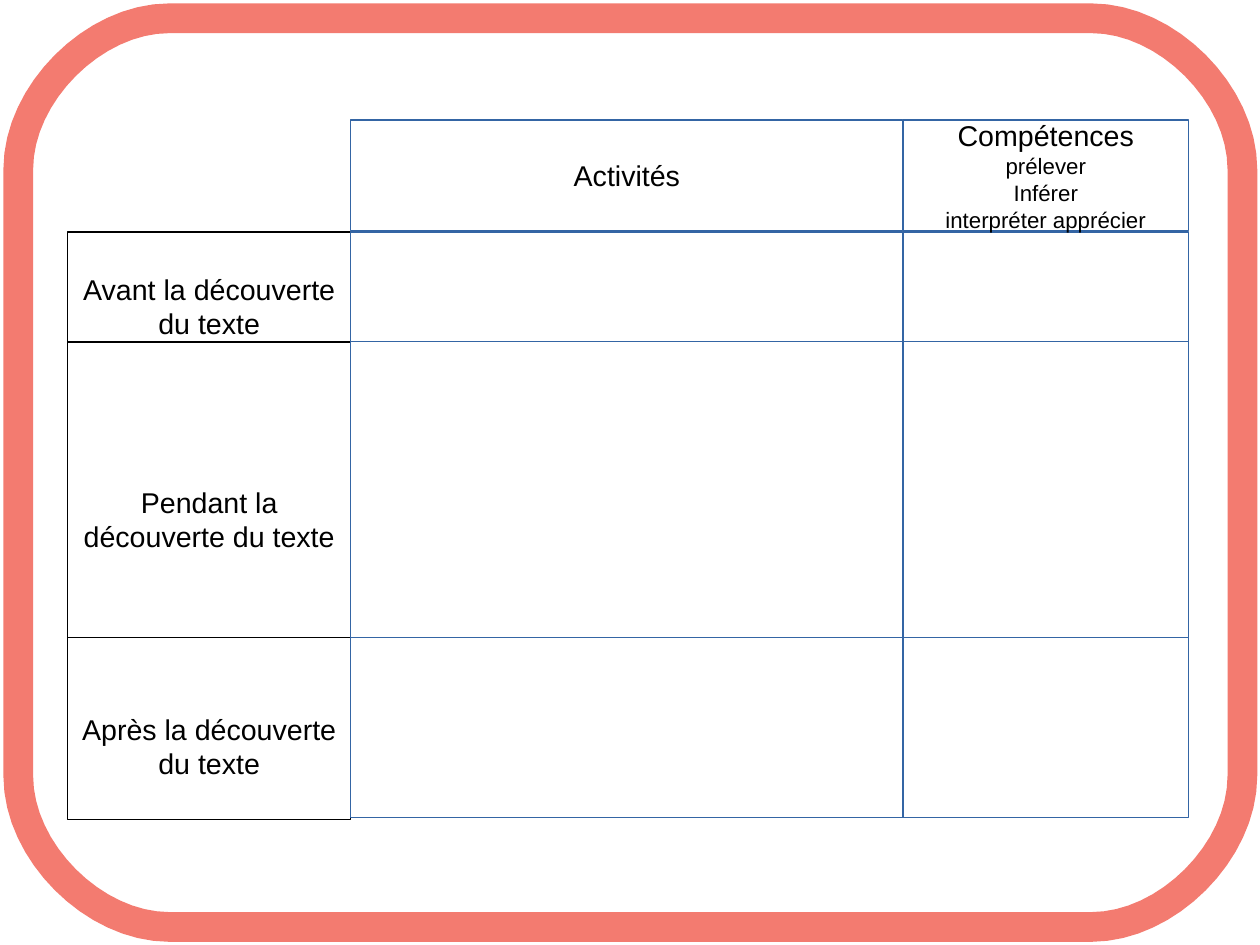
from pptx import Presentation
from pptx.dml.color import RGBColor
from pptx.enum import shapes, text
from pptx.util import Cm, Inches, Pt

BLACK = RGBColor(0x00, 0x00, 0x00)
WHITE = RGBColor(0xFF, 0xFF, 0xFF)
BLUE = RGBColor(0x34, 0x65, 0xA4)
CORAL = RGBColor(0xF3, 0x7B, 0x70)

HEADERS = [
    [("Activités", 18)],
    [("Compétences", 18), ("prélever", 14), ("Inférer", 14), ("interpréter apprécier", 14)],
]
STAGES = [
    ("Avant la découverte du texte", 1),
    ("Pendant la découverte du texte", 4),
    ("Après la découverte du texte", 2),
]

COLUMNS = [(0.59, 2.48), (3.07, 4.83), (7.9, 2.5)]
HEADER_ROW = (1.05, 0.97)
STAGE_ROWS = [(2.03, 0.97), (2.99, 2.59), (5.58, 1.57)]
LAST_LABEL_EXTRA = 0.02
LINE_HEIGHT = 0.3
FRAME_EDGES = (0.16, 0.16, 10.87, 8.11)
FRAME_CORNER = 1.32
CORNER_STEPS = 16


def style(shape, line_color, weight, fill_color=None):
    shape.shadow.inherit = False
    shape.line.color.rgb = line_color
    shape.line.width = Pt(weight)
    if fill_color is None:
        shape.fill.background()
    else:
        shape.fill.solid()
        shape.fill.fore_color.rgb = fill_color


def add_box(page, column, row, line_color, fill_color=None):
    (left, width), (top, height) = column, row
    box = page.shapes.add_shape(
        shapes.MSO_SHAPE.RECTANGLE, Inches(left), Inches(top), Inches(width), Inches(height))
    style(box, line_color, 0.75, fill_color)
    return box


def write(box, lines, anchor, lines_above=0):
    frame = box.text_frame
    frame.word_wrap = True
    frame.vertical_anchor = anchor
    frame.margin_top = Inches(0.05 + lines_above * LINE_HEIGHT)
    frame.text = "\n".join(words for words, size in lines)
    for para, (words, size) in zip(frame.paragraphs, lines):
        para.alignment = text.PP_ALIGN.CENTER
        for span in para.runs:
            span.font.name = "Arial"
            span.font.size = Pt(size)
            span.font.color.rgb = BLACK


def corner_points(corner, start, end):
    points = []
    for step in range(CORNER_STEPS + 1):
        t = step / CORNER_STEPS
        from_start = (1 - t) ** 3 + 1.5 * t * (1 - t) ** 2
        from_end = t ** 3 + 1.5 * t ** 2 * (1 - t)
        points.append(tuple(
            Inches(c + (s - c) * from_start + (e - c) * from_end)
            for c, s, e in zip(corner, start, end)))
    return points


def add_frame(page):
    left, top, right, bottom = FRAME_EDGES
    r = FRAME_CORNER
    corners = [
        ((left, top), (left + r, top), (left, top + r)),
        ((left, bottom), (left, bottom - r), (left + r, bottom)),
        ((right, bottom), (right - r, bottom), (right, bottom - r)),
        ((right, top), (right, top + r), (right - r, top)),
    ]
    points = [point for corner in corners for point in corner_points(*corner)]
    builder = page.shapes.build_freeform(*points[0])
    builder.add_line_segments(points[1:], close=True)
    style(builder.convert_to_shape(), CORAL, 18.71)


def main():
    """Build the grid of reading activities and skills inside a rounded frame."""
    deck = Presentation()
    deck.slide_width, deck.slide_height = Cm(28), Cm(21)
    page = deck.slides.add_slide(deck.slide_layouts[6])

    label_column, *grid_columns = COLUMNS
    for (label, lines_above), (top, height) in zip(STAGES, STAGE_ROWS):
        if label == STAGES[-1][0]:
            height += LAST_LABEL_EXTRA
        box = add_box(page, label_column, (top, height), BLACK)
        write(box, [(label, 18)], text.MSO_ANCHOR.TOP, lines_above)

    activities, skills = grid_columns
    for row in STAGE_ROWS:
        add_box(page, activities, row, BLUE, WHITE)
    add_frame(page)
    for row in STAGE_ROWS:
        add_box(page, skills, row, BLUE, WHITE)

    for column, lines in zip(grid_columns, HEADERS):
        header = add_box(page, column, HEADER_ROW, BLUE, WHITE)
        write(header, lines, text.MSO_ANCHOR.MIDDLE)

    deck.save("out.pptx")


if __name__ == "__main__":
    main()
